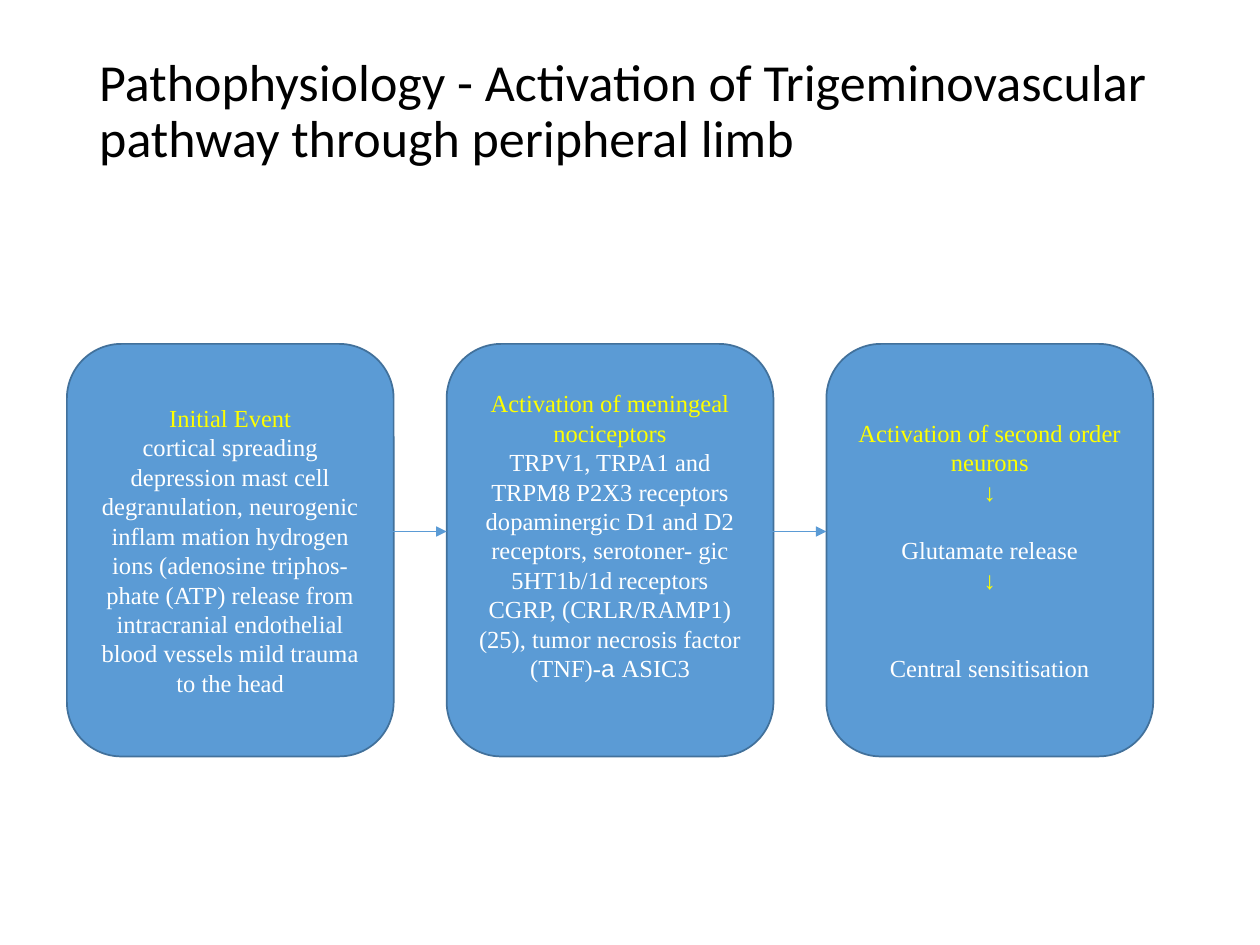
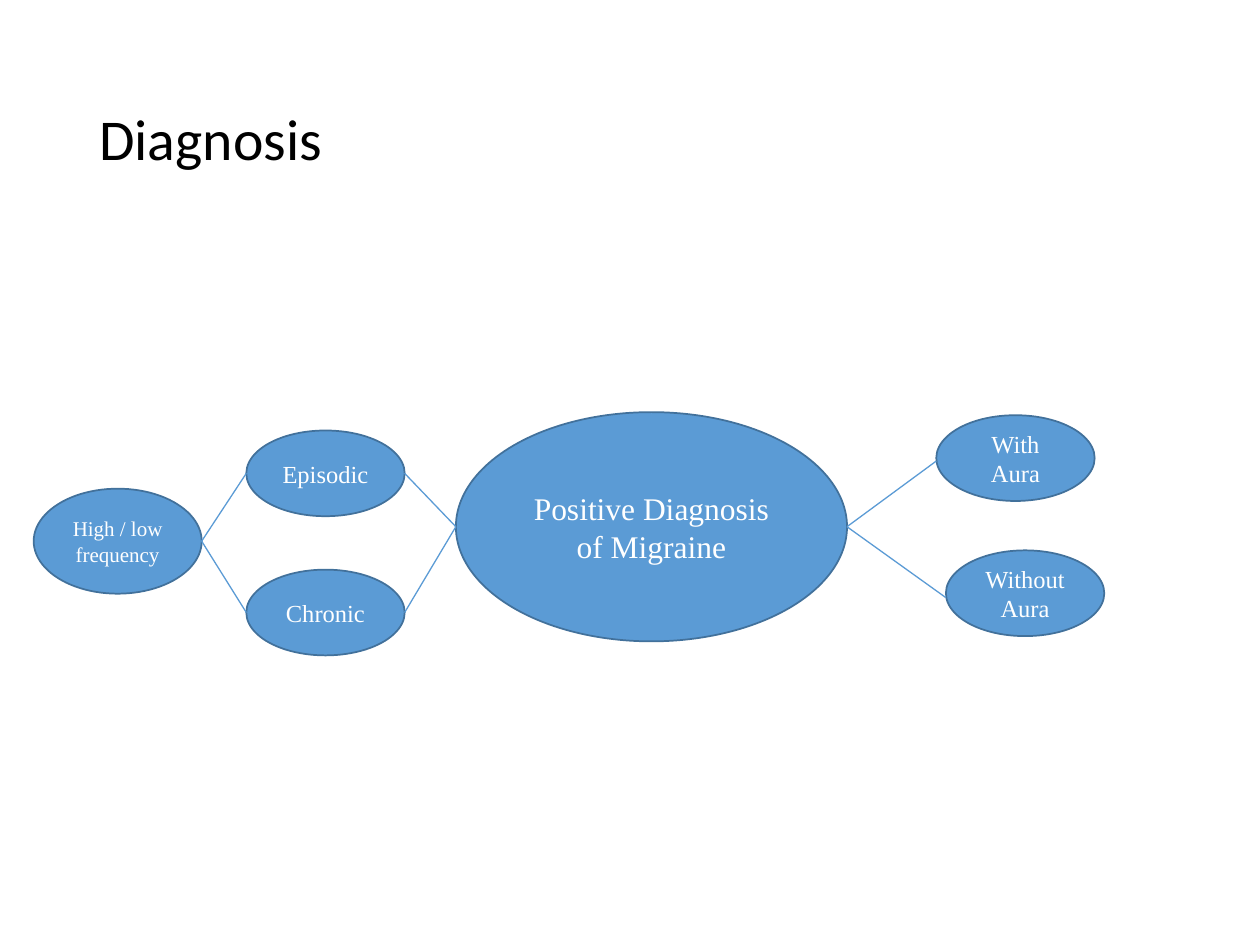
from dataclasses import dataclass

from lxml import etree
from pptx import Presentation
from pptx import util as u
from pptx.dml import color
from pptx.enum import shapes, text
from pptx.oxml import ns

Pt = u.Pt


@dataclass(frozen=True)
class Theme:
    fill: str = "5B9BD5"
    outline: str = "42719B"
    title: str = "000000"
    heading: str = "FFFF00"
    body: str = "FFFFFF"
    title_font: str = "Calibri"
    body_font: str = "Times New Roman"
    symbol_font: str = "Arial"
    title_size: float = 33
    long_title_size: float = 29.7
    large: float = 18
    normal: float = 14
    small: float = 12
    line_gap: float = 16.8


def rgb(value):
    return color.RGBColor.from_string(value)


class Deck:
    def __init__(self, theme):
        self.theme = theme
        self.prs = Presentation()
        self.prs.slide_width, self.prs.slide_height = Pt(720), Pt(540)
        self.s = None

    def style(self, font, name, size, colour):
        font.name, font.size = name, Pt(size)
        font.color.rgb = rgb(colour)

    def slide(self, title, size, anchor):
        self.s = self.prs.slides.add_slide(self.prs.slide_layouts[5])
        sp = self.s.shapes.title
        sp.left, sp.top, sp.width, sp.height = Pt(49.5), Pt(28.75), Pt(621), Pt(104.4)
        tf = sp.text_frame
        tf.text = title
        tf.auto_size = text.MSO_AUTO_SIZE.NONE
        tf.vertical_anchor = anchor
        p = tf.paragraphs[0]
        p.alignment = text.PP_ALIGN.LEFT
        p.line_spacing = 0.9
        self.style(p.runs[0].font, self.theme.title_font, size, self.theme.title)

    def node(self, kind, box, paragraphs, size):
        sp = self.s.shapes.add_shape(kind, *map(Pt, box))
        sp.shadow.inherit = False
        sp.fill.solid()
        sp.fill.fore_color.rgb = rgb(self.theme.fill)
        sp.line.color.rgb = rgb(self.theme.outline)
        sp.line.width = Pt(1)
        tf = sp.text_frame
        tf.word_wrap = True
        tf.vertical_anchor = text.MSO_ANCHOR.MIDDLE
        for i, (words, colour, blank_lines) in enumerate(paragraphs):
            p = tf.add_paragraph() if i else tf.paragraphs[0]
            p.text = words
            p.alignment = text.PP_ALIGN.CENTER
            if blank_lines:
                p.space_before = Pt(blank_lines * self.theme.line_gap)
            self.style(p.runs[0].font, self.theme.body_font, size, colour)
        return sp

    def card(self, left, paragraphs):
        kind = shapes.MSO_SHAPE.ROUNDED_RECTANGLE
        return self.node(kind, (left, 196.5, 186.75, 235.75), paragraphs, self.theme.normal)

    def oval(self, box, words, size):
        return self.node(shapes.MSO_SHAPE.OVAL, box, [(words, self.theme.body, 0)], size)

    def add_run(self, p, words, font):
        r = p.add_run()
        r.text = words
        self.style(r.font, font, self.theme.normal, self.theme.body)

    def line(self, start, end, arrow=False):
        c = self.s.shapes.add_connector(
            shapes.MSO_CONNECTOR.STRAIGHT, *map(Pt, (*start, *end)))
        c.line.color.rgb = rgb(self.theme.fill)
        c.line.width = Pt(0.75)
        if arrow:
            etree.SubElement(c.line._get_or_add_ln(), ns.qn("a:tailEnd"), type="triangle")
        etree.SubElement(c._element.spPr, ns.qn("a:effectLst"))


def pathway_slide(deck):
    t = deck.theme
    deck.slide("Pathophysiology - Activation of Trigeminovascular pathway through "
               "peripheral limb", t.long_title_size, text.MSO_ANCHOR.TOP)
    lefts = [38.25 + 217 * i for i in range(3)]
    deck.card(lefts[0], [
        ("Initial Event", t.heading, 0),
        ("cortical spreading depression mast cell degranulation, neurogenic inflam "
         "mation hydrogen ions (adenosine triphos- phate (ATP) release from "
         "intracranial endothelial blood vessels mild trauma to the head", t.body, 0),
    ])
    receptors = deck.card(lefts[1], [
        ("Activation of meningeal nociceptors", t.heading, 0),
        ("TRPV1, TRPA1 and TRPM8 P2X3 receptors dopaminergic D1 and D2 receptors, "
         "serotoner- gic 5HT1b/1d receptors CGRP, (CRLR/RAMP1) (25), tumor necrosis "
         "factor (TNF)-", t.body, 0),
    ])
    tf = receptors.text_frame
    tf.margin_bottom = Pt(3.6 + t.line_gap)
    deck.add_run(tf.paragraphs[1], "a ", t.symbol_font)
    deck.add_run(tf.paragraphs[1], "ASIC3", t.body_font)
    deck.card(lefts[2], [
        ("Activation of second order neurons", t.heading, 0),
        ("↓", t.heading, 0),
        ("Glutamate release", t.body, 1),
        ("↓", t.heading, 0),
        ("Central sensitisation", t.body, 2),
    ])
    for left in lefts[1:]:
        deck.line((left - 49.5, 303.75), (left, 303.75), arrow=True)


def diagnosis_slide(deck):
    t = deck.theme
    deck.slide("Diagnosis", t.title_size, text.MSO_ANCHOR.MIDDLE)
    for box, words, size in [
        ((260.5, 235.5, 223.5, 131), "Positive Diagnosis of Migraine", t.large),
        ((140.75, 246, 90.5, 49), "Episodic", t.normal),
        ((140.75, 325.5, 90.5, 49), "Chronic", t.normal),
        ((535, 237.25, 90.5, 49), "With Aura", t.normal),
        ((19.25, 279.25, 96, 60), "High / low frequency", t.small),
        ((540.5, 314.5, 90.5, 49), "Without Aura", t.normal),
    ]:
        deck.oval(box, words, size)
    for hub, ends in [
        ((484, 301), [(535, 263.5), (540.5, 341.5)]),
        ((260.5, 301), [(231.25, 270.5), (231.25, 350)]),
        ((115.25, 309.25), [(140.75, 270.5), (140.75, 350)]),
    ]:
        for end in ends:
            deck.line(hub, end)


def main():
    deck = Deck(Theme())
    pathway_slide(deck)
    diagnosis_slide(deck)
    deck.prs.save("out.pptx")


if __name__ == "__main__":
    main()
